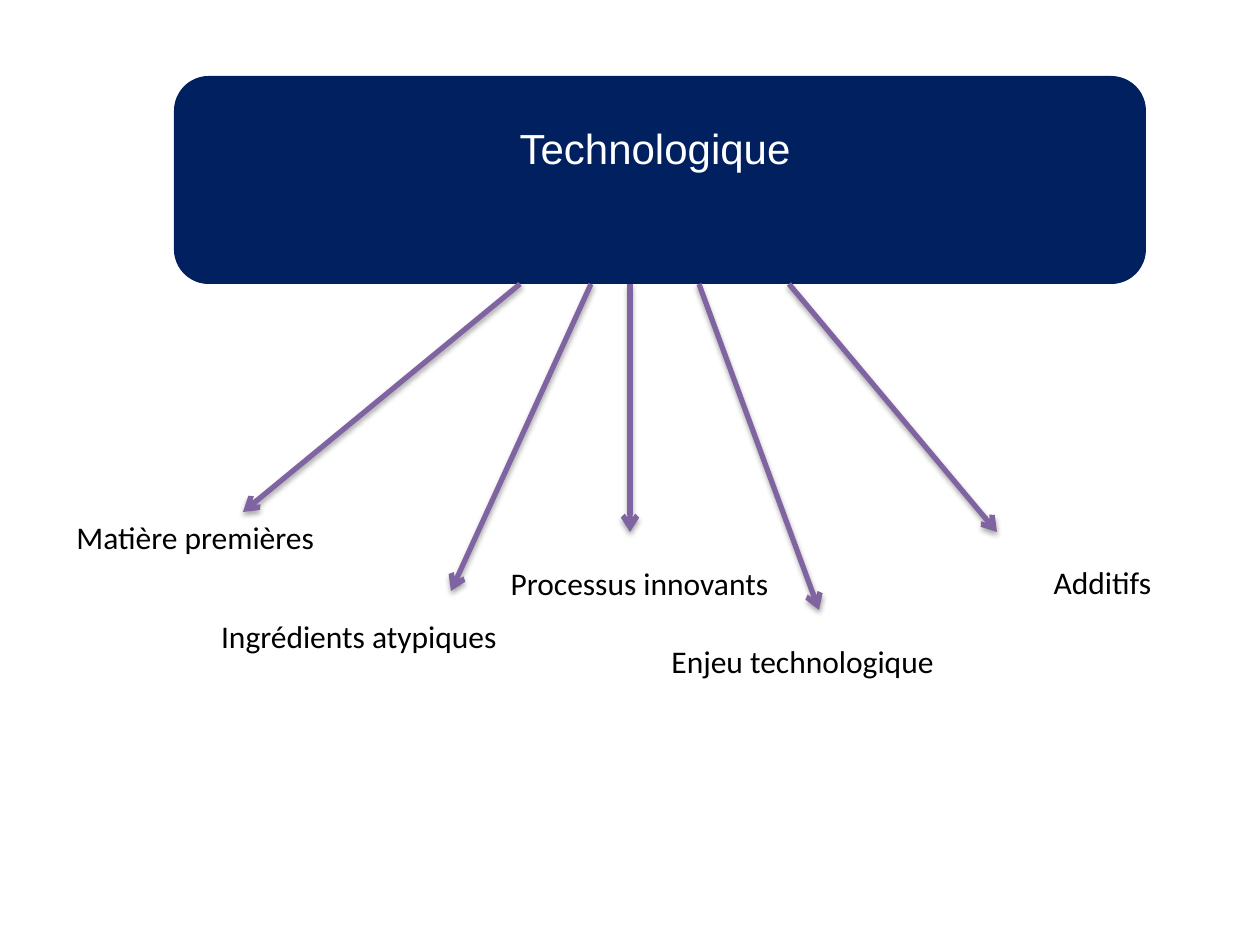
"""Build a slide with a technology heading and arrows to its five topics."""
from lxml.etree import SubElement
from pptx import Presentation
from pptx.dml.color import RGBColor
from pptx.enum.shapes import MSO_CONNECTOR, MSO_SHAPE
from pptx.enum.text import MSO_ANCHOR, MSO_AUTO_SIZE, PP_ALIGN
from pptx.oxml.ns import qn
from pptx.util import Emu, Pt

SLIDE_SIZE = (1260, 945)
NAVY, PURPLE, WHITE, BLACK = "002060", "8064A2", "FFFFFF", "000000"
HEADING = "Technologique"
HEADING_BOX = (263, 116, 784, 63)
BAND = (174, 76, 972, 208)
LABEL_HEIGHT = 50
LEFT, CENTER = PP_ALIGN.LEFT, PP_ALIGN.CENTER
TOPICS = [
    {"text": "Matière premières", "box": (64, 512, 297), "align": LEFT,
     "start_x": 520, "tip": (243, 512)},
    {"text": "Ingrédients atypiques", "box": (184, 611, 350), "align": CENTER,
     "start_x": 591, "tip": (451, 591)},
    {"text": "Processus innovants", "box": (491, 558, 297), "align": CENTER,
     "start_x": 630, "tip": (630, 532)},
    {"text": "Enjeu technologique", "box": (659, 636, 297), "align": LEFT,
     "start_x": 699, "tip": (819, 610)},
    {"text": "Additifs", "box": (954, 557, 297), "align": CENTER,
     "start_x": 789, "tip": (997, 532)},
]


def px(*lengths):
    return [Emu(round(length * 914400 / 126)) for length in lengths]


def color(value):
    return RGBColor.from_string(value)


def write_text(shape, text, *, font="Calibri", size=18, fill=BLACK, align=LEFT):
    frame = shape.text_frame
    frame.word_wrap = True
    frame.auto_size = MSO_AUTO_SIZE.SHAPE_TO_FIT_TEXT
    frame.vertical_anchor = MSO_ANCHOR.TOP
    paragraph = frame.paragraphs[0]
    paragraph.alignment = align
    run = paragraph.add_run()
    run.text = text
    run.font.name = font
    run.font.size = Pt(size)
    run.font.color.rgb = color(fill)


def add_band(slide):
    band = slide.shapes.add_shape(MSO_SHAPE.ROUNDED_RECTANGLE, *px(*BAND))
    band.shadow.inherit = False
    band.fill.solid()
    band.fill.fore_color.rgb = color(NAVY)
    band.line.fill.background()
    slide.shapes.title.element.addprevious(band.element)


def add_heading(slide):
    title = slide.shapes.title
    title.left, title.top, title.width, title.height = px(*HEADING_BOX)
    write_text(title, HEADING, font="Arial", size=24, fill=WHITE, align=CENTER)


def add_arrow(slide, start, tip):
    arrow = slide.shapes.add_connector(MSO_CONNECTOR.STRAIGHT, *px(*start, *tip))
    arrow.line.color.rgb = color(PURPLE)
    arrow.line.width = Pt(3)
    properties = arrow.element.spPr
    SubElement(properties.find(qn("a:ln")), qn("a:tailEnd"), type="arrow")
    effects = SubElement(properties, qn("a:effectLst"))
    shadow = SubElement(effects, qn("a:outerShdw"), blurRad="40000", dist="23000",
                        dir="5400000", rotWithShape="0")
    shade = SubElement(shadow, qn("a:srgbClr"), val=BLACK)
    SubElement(shade, qn("a:alpha"), val="35000")


def main():
    presentation = Presentation()
    presentation.slide_width, presentation.slide_height = px(*SLIDE_SIZE)
    slide = presentation.slides.add_slide(presentation.slide_layouts[5])
    add_band(slide)
    add_heading(slide)
    band_bottom = BAND[1] + BAND[3]
    for topic in TOPICS:
        add_arrow(slide, (topic["start_x"], band_bottom), topic["tip"])
    for topic in TOPICS:
        label = slide.shapes.add_textbox(*px(*topic["box"], LABEL_HEIGHT))
        write_text(label, topic["text"], align=topic["align"])
    presentation.save("out.pptx")


if __name__ == "__main__":
    main()
